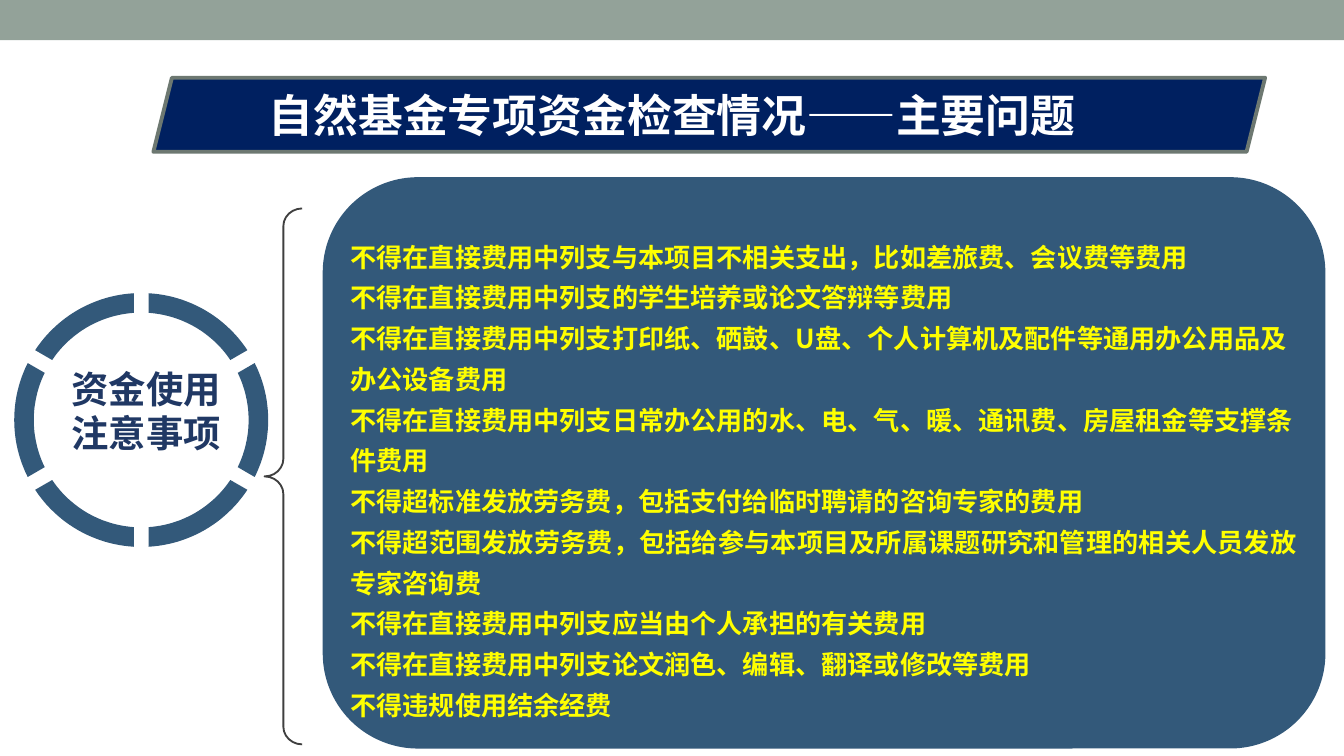
from math import asin, cos, radians, sin

from lxml.etree import SubElement
from pptx import Presentation
from pptx.dml.color import RGBColor
from pptx.enum.shapes import MSO_SHAPE
from pptx.enum.text import MSO_ANCHOR, MSO_AUTO_SIZE, PP_ALIGN
from pptx.oxml.ns import qn
from pptx.util import Cm, Pt

FONT = "Noto Sans CJK SC"
SAGE, NAVY, BLUE = "93A299", "002060", "33597A"

TITLE = "自然基金专项资金检查情况——主要问题"
RING_LABEL = "资金使用注意事项"
LEFT_RULES = [
    "不得在直接费用中列支与本项目不相关支出，比如差旅费、会议费等费用",
    "不得在直接费用中列支的学生培养或论文答辩等费用",
    "不得在直接费用中列支打印纸、硒鼓、U盘、个人计算机及配件等通用办公用品及办公设备费用",
    "不得在直接费用中列支日常办公用的水、电、气、暖、通讯费、房屋租金等支撑条件费用",
]
JUSTIFIED_RULES = [
    "不得超标准发放劳务费，包括支付给临时聘请的咨询专家的费用",
    "不得超范围发放劳务费，包括给参与本项目及所属课题研究和管理的相关人员发放专家咨询费",
    "不得在直接费用中列支应当由个人承担的有关费用",
    "不得在直接费用中列支论文润色、编辑、翻译或修改等费用",
    "不得违规使用结余经费",
]

RING_CENTER = (2.67, 7.94)
OUTER_RADIUS, INNER_RADIUS, HALF_GAP = 2.4, 2.03, 0.14
SEGMENTS, ARC_STEPS = 6, 24


def color(value):
    return RGBColor.from_string(value)


def place(shape, left, top, width, height):
    shape.left, shape.top = Cm(left), Cm(top)
    shape.width, shape.height = Cm(width), Cm(height)


def paint(shape, fill=None, line=None, weight=1):
    shape.shadow.inherit = False
    if fill:
        shape.fill.solid()
        shape.fill.fore_color.rgb = color(fill)
    else:
        shape.fill.background()
    if line:
        shape.line.color.rgb = color(line)
        shape.line.width = Pt(weight)
    else:
        shape.line.fill.background()


def add_preset(slide, kind, box, fill=None, line=None, weight=1):
    shape = slide.shapes.add_shape(kind, *map(Cm, box))
    paint(shape, fill, line, weight)
    return shape


def set_frame(text_frame, anchor, margin=0):
    text_frame.word_wrap = True
    text_frame.auto_size = MSO_AUTO_SIZE.NONE
    text_frame.vertical_anchor = anchor
    text_frame.margin_left = text_frame.margin_right = Cm(margin)
    text_frame.margin_top = text_frame.margin_bottom = 0


def format_paragraph(paragraph, size, text_color, alignment):
    paragraph.alignment = alignment
    for run in paragraph.runs:
        run.font.size = Pt(size)
        run.font.bold = True
        run.font.color.rgb = color(text_color)
        run.font.name = FONT
        SubElement(run.font._element, qn("a:ea"), typeface=FONT)


def arc(radius, start, end):
    inset = asin(HALF_GAP / radius)
    first, last = radians(start) + inset, radians(end) - inset
    angles = [first + (last - first) * step / ARC_STEPS for step in range(ARC_STEPS + 1)]
    return [
        (Cm(RING_CENTER[0] + radius * cos(angle)), Cm(RING_CENTER[1] + radius * sin(angle)))
        for angle in angles
    ]


def add_ring(slide):
    sweep = 360 / SEGMENTS
    for index in range(SEGMENTS):
        start = sweep / 2 + index * sweep
        end = start + sweep
        points = arc(OUTER_RADIUS, start, end) + arc(INNER_RADIUS, start, end)[::-1]
        builder = slide.shapes.build_freeform(*points[0])
        builder.add_line_segments(points[1:], close=True)
        paint(builder.convert_to_shape(), BLUE)

    label = slide.shapes.add_textbox(Cm(0.91), Cm(6.73), Cm(3.71), Cm(2.06))
    set_frame(label.text_frame, MSO_ANCHOR.MIDDLE, 0.25)
    label.text_frame.text = RING_LABEL
    format_paragraph(label.text_frame.paragraphs[0], 20, "203864", PP_ALIGN.CENTER)


def fill_title(title):
    place(title, 5.08, 1.47, 17, 1.4)
    set_frame(title.text_frame, MSO_ANCHOR.MIDDLE)
    title.text_frame.text = TITLE
    format_paragraph(title.text_frame.paragraphs[0], 24, "FFFFFF", PP_ALIGN.LEFT)


def fill_rules(body):
    place(body, 6.62, 3.87, 17.9, 9.75)
    text_frame = body.text_frame
    set_frame(text_frame, MSO_ANCHOR.BOTTOM)
    text_frame.text = "\n".join(LEFT_RULES + JUSTIFIED_RULES)
    for index, paragraph in enumerate(text_frame.paragraphs):
        paragraph.line_spacing = 1.3
        paragraph.space_before = Pt(0)
        properties = paragraph._p.get_or_add_pPr()
        properties.set("marL", "0")
        properties.set("indent", "0")
        SubElement(properties, qn("a:buNone"))
        alignment = PP_ALIGN.LEFT if index < len(LEFT_RULES) else PP_ALIGN.JUSTIFY
        format_paragraph(paragraph, 14, "FFFF00", alignment)


def main():
    """Build the slide on spending rules for project funds."""
    presentation = Presentation()
    presentation.slide_width, presentation.slide_height = Cm(25.4), Cm(14.29)
    slide = presentation.slides.add_slide(presentation.slide_layouts[1])
    title, body = slide.placeholders

    add_preset(slide, MSO_SHAPE.RECTANGLE, (0, 0, 25.4, 0.76), SAGE)
    add_preset(slide, MSO_SHAPE.PARALLELOGRAM, (2.9, 1.47, 21.01, 1.4), NAVY, "6D7871", 2.08)
    add_ring(slide)
    brace = add_preset(slide, MSO_SHAPE.RIGHT_BRACE, (5, 3.94, 0.71, 10.13), line="3F3F3F")
    brace.rotation = 180
    brace.adjustments[0], brace.adjustments[1] = 0.47, 0.5
    add_preset(slide, MSO_SHAPE.ROUNDED_RECTANGLE, (6.1, 3.35, 18.95, 10.8), BLUE)

    fill_title(title)
    fill_rules(body)
    for placeholder in (title, body):
        slide.shapes._spTree.append(placeholder._element)
    presentation.save("out.pptx")


if __name__ == "__main__":
    main()
